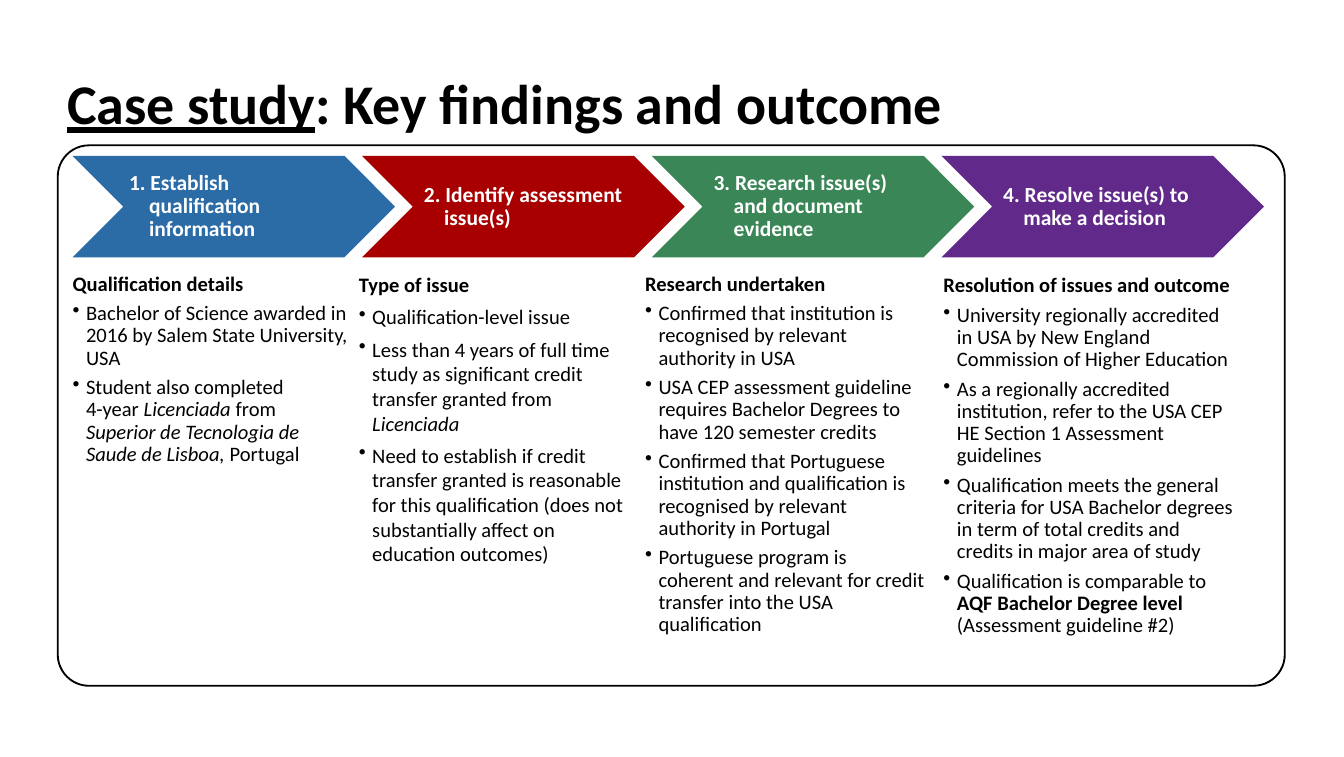
import pptx
import pptx.dml.color
import pptx.enum.shapes
import pptx.enum.text
import pptx.oxml.ns
import pptx.util
from lxml import etree

KINDS = pptx.enum.shapes.MSO_SHAPE
ANCHOR = pptx.enum.text.MSO_ANCHOR

STEPS = [
    ("1. Establish qualification information", "2B6CA7"),
    ("2. Identify assessment issue(s)", "A80000"),
    ("3. Research issue(s) and document evidence", "3A8657"),
    ("4. Resolve issue(s) to make a decision", "612A8A"),
]

NOTES = [
    (5.4, 36.1, 20.5, 0.9, "Qualification details", [
        ["Bachelor of Science awarded in 2016 by Salem State University, USA"],
        ["Student also completed\n4-year ", ("Licenciada", "i"), " from \n",
         ("Superior de Tecnologia de Saude de Lisboa, ", "i"), "Portugal"],
    ]),
    (26.7, 36.3, 20, 1.0, "Type of issue", [
        ["Qualification-level issue"],
        ["Less than 4 years of full time study as significant credit "
         "transfer granted from ", ("Licenciada", "i")],
        ["Need to establish if credit transfer granted is reasonable for this "
         "qualification (does not substantially affect on education outcomes)"],
    ]),
    (48, 36.1, 20.9, 0.9, "Research undertaken", [
        ["Confirmed that institution is recognised by relevant authority in USA"],
        ["USA CEP assessment guideline requires Bachelor Degrees "
         "to have 120 semester credits"],
        ["Confirmed that Portuguese institution and qualification is "
         "recognised by relevant authority in Portugal"],
        ["Portuguese program is coherent and relevant for credit "
         "transfer into the USA qualification"],
    ]),
    (70.2, 36.3, 21.9, 0.9, "Resolution of issues and outcome", [
        ["University regionally accredited in USA by New England "
         "Commission of Higher Education"],
        ["As a regionally accredited institution, refer to the USA CEP "
         "HE Section 1 Assessment guidelines"],
        ["Qualification meets the general criteria for USA Bachelor degrees "
         "in term of total credits and credits in major area of study"],
        ["Qualification is comparable to ", ("AQF Bachelor Degree level ", "b"),
         "(Assessment guideline #2)"],
    ]),
]


def color(code):
    return pptx.dml.color.RGBColor.from_string(code)


class Board:
    font = "Calibri"
    ink = "000000"

    def __init__(self, deck):
        self.deck = deck
        self.slide = deck.slides.add_slide(deck.slide_layouts[6])

    def area(self, left, top, width, height):
        col, row = self.deck.slide_width / 100, self.deck.slide_height / 100
        return [round(n) for n in (left * col, top * row, width * col, height * row)]

    def shape(self, kind, area, fill=None, line=None):
        item = self.slide.shapes.add_shape(kind, *self.area(*area))
        item.shadow.inherit = False
        if fill:
            item.fill.solid()
            item.fill.fore_color.rgb = color(fill)
        else:
            item.fill.background()
        if line:
            item.line.color.rgb = color(line)
            item.line.width = pptx.util.Pt(1)
        else:
            item.line.fill.background()
        return item

    def box(self, area, pads=(0, 0, 0, 0), anchor=ANCHOR.TOP):
        frame = self.slide.shapes.add_textbox(*self.area(*area)).text_frame
        frame.word_wrap = True
        frame.vertical_anchor = anchor
        (frame.margin_left, frame.margin_top,
         frame.margin_right, frame.margin_bottom) = map(pptx.util.Inches, pads)
        return frame

    def text(self, para, parts, size, bold=False, ink=None, space=0.9,
             after=0, hang=0, bullet=False):
        para.line_spacing = space
        para.space_after = pptx.util.Pt(after)
        props = para._p.get_or_add_pPr()
        if hang:
            props.set("marL", str(pptx.util.Inches(hang)))
            props.set("indent", str(-pptx.util.Inches(hang)))
        if bullet:
            mark = etree.SubElement(props, pptx.oxml.ns.qn("a:buChar"))
            mark.set("char", "•")
        font = para.font
        font.name, font.size, font.bold = self.font, pptx.util.Pt(size), bold
        font.color.rgb = color(ink or self.ink)
        for part in parts:
            words, style = (part, "") if isinstance(part, str) else part
            for count, line in enumerate(words.split("\n")):
                if count:
                    para.add_line_break()
                if line:
                    run = para.add_run()
                    run.text = line
                    if style == "i":
                        run.font.italic = True
                    elif style == "b":
                        run.font.bold = True
                    elif style == "u":
                        run.font.underline = True

    def title(self, parts):
        frame = self.box((5, 6.75, 87.4, 14.6), anchor=ANCHOR.MIDDLE)
        self.text(frame.paragraphs[0], parts, 30, bold=True)

    def step(self, index, label, fill):
        left, top, high = 5.4 + 21.55 * index, 20.6, 13.4
        self.shape(KINDS.CHEVRON, (left, top, 24, high), fill)
        pad = 0.08 if index else 0.04
        frame = self.box((left + 3.8, top, 16.4, high),
                         (pad, 0.02, 0, 0.02), ANCHOR.MIDDLE)
        self.text(frame.paragraphs[0], [label], 11.5, bold=True,
                  ink="FFFFFF", after=6, hang=0.15)

    def note(self, left, top, width, space, head, items):
        frame = self.box((left, top, width, 54.3))
        self.text(frame.paragraphs[0], [head], 11, bold=True, after=4)
        for parts in items:
            self.text(frame.add_paragraph(), parts, 11, space=space,
                      after=4, hang=0.1, bullet=True)

    def border(self):
        item = self.shape(KINDS.ROUNDED_RECTANGLE, (4.3, 19.2, 91.3, 71.4),
                          line=self.ink)
        item.adjustments[0] = 0.058


def main():
    deck = pptx.Presentation()
    deck.slide_width = pptx.util.Inches(10)
    deck.slide_height = pptx.util.Inches(5.63)
    board = Board(deck)
    for index, (label, fill) in enumerate(STEPS):
        board.step(index, label, fill)
    board.title([("Case study", "u"), ": Key findings and outcome"])
    for note in NOTES:
        board.note(*note)
    board.border()
    deck.save("out.pptx")


if __name__ == "__main__":
    main()
